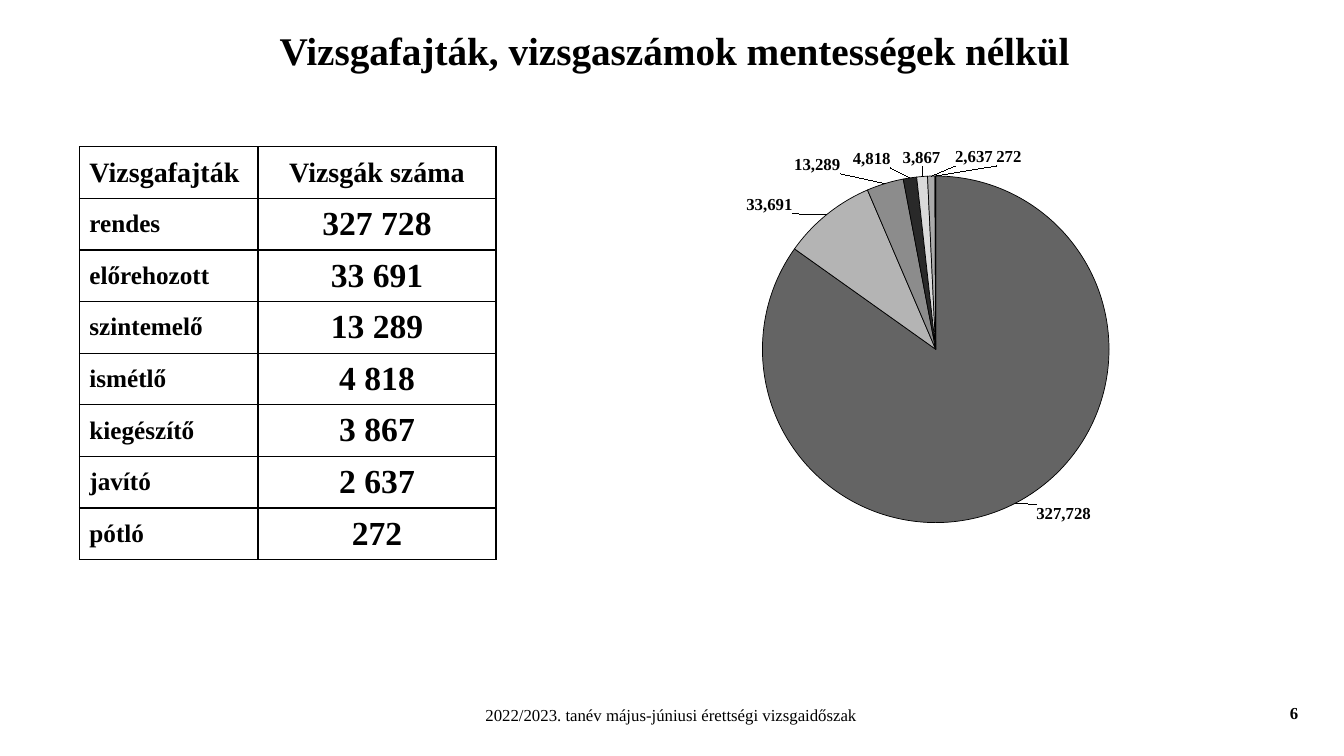
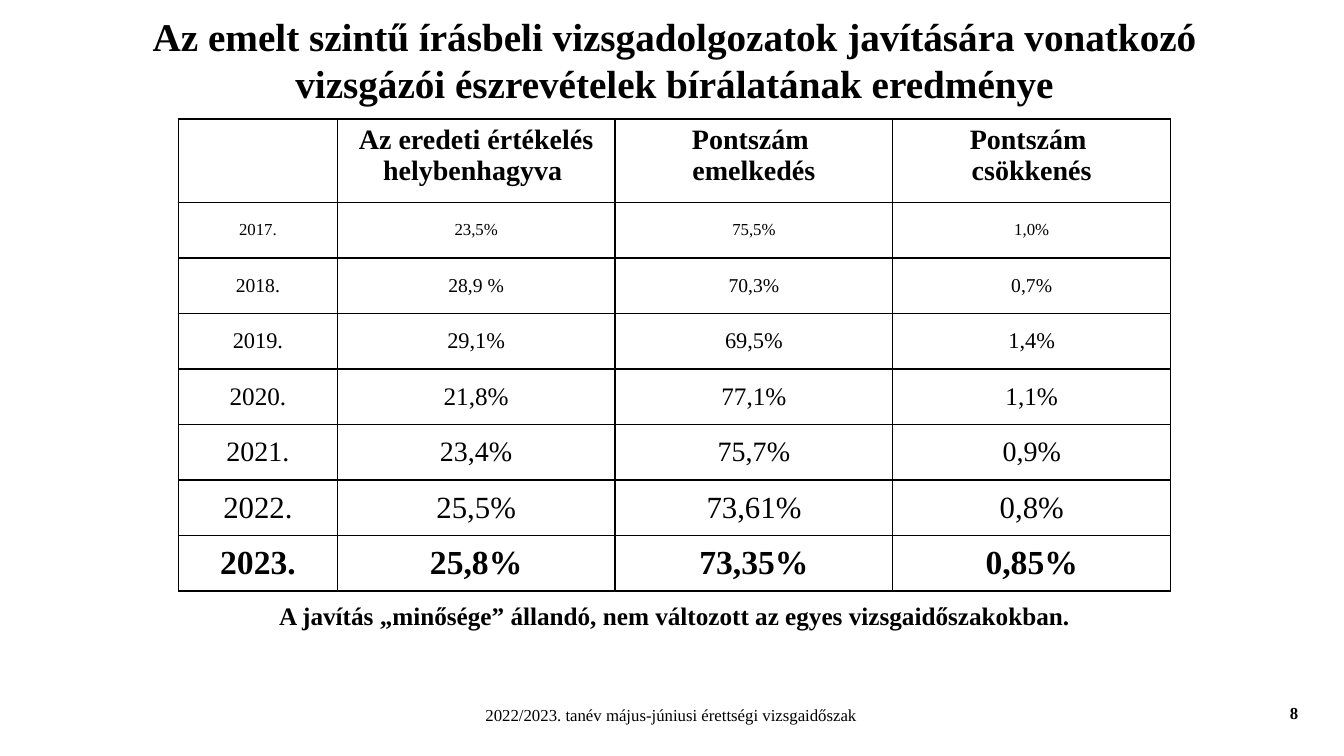
from dataclasses import dataclass
from typing import NamedTuple

from lxml.etree import SubElement
from pptx import Presentation
from pptx.chart.data import CategoryChartData as ChartData
from pptx.dml.color import RGBColor
from pptx.enum.chart import XL_CHART_TYPE as Kind, XL_LABEL_POSITION as Pos
from pptx.enum.text import MSO_ANCHOR as Anchor, PP_ALIGN as Align
from pptx.oxml import parse_xml
from pptx.oxml.ns import nsdecls, qn
from pptx.util import Cm, Pt

# Shared look
BLACK = RGBColor(0x00, 0x00, 0x00)
SHADES = [RGBColor(v, v, v) for v in (0x64, 0xB4, 0x8C, 0x29, 0xDA, 0xAB, 0x7F)]
FONT = "Times New Roman"
FOOTER = "2022/2023. tanév május-júniusi érettségi vizsgaidőszak"
EDGE, SPAN = 2, 30  # left edge and width of the main text, in cm


class Box(NamedTuple):
    left: float
    top: float
    width: float
    height: float


class Row(NamedTuple):
    texts: tuple[str, ...]
    size: float
    bold: bool = True
    lead: float | None = None  # size of the first column, if it differs


@dataclass
class Grid:
    left: float
    top: float
    widths: list[float]
    heights: list[float]
    rows: list[Row]
    first: Align = Align.CENTER
    head: Anchor = Anchor.MIDDLE


class Slice(NamedTuple):
    value: int
    dx: float  # label shift, as a share of the chart
    dy: float


# Content
EXAMS = Grid(2, 3.7, [4.5, 6], [1.3] * 8, [
    Row(("Vizsgafajták", "Vizsgák száma"), 20),
    *(Row(pair, 24, lead=18) for pair in (
        ("rendes", "327 728"),
        ("előrehozott", "33 691"),
        ("szintemelő", "13 289"),
        ("ismétlő", "4 818"),
        ("kiegészítő", "3 867"),
        ("javító", "2 637"),
        ("pótló", "272"),
    )),
], first=Align.LEFT)

YEARS = [
    ("2017.", "23,5%", "75,5%", "1,0%"),
    ("2018.", "28,9 %", "70,3%", "0,7%"),
    ("2019.", "29,1%", "69,5%", "1,4%"),
    ("2020.", "21,8%", "77,1%", "1,1%"),
    ("2021.", "23,4%", "75,7%", "0,9%"),
    ("2022.", "25,5%", "73,61%", "0,8%"),
    ("2023.", "25,8%", "73,35%", "0,85%"),
]
REVIEWS = Grid(4.5, 3, [4, 7, 7, 7], [2.1] + [1.4] * 7, [
    Row(("", "Az eredeti értékelés helybenhagyva ",
         "Pontszám \vemelkedés", "Pontszám \vcsökkenés"), 20),
    # Text grows towards the latest year
    *(Row(texts, 12 + 2 * i, bold=texts is YEARS[-1])
      for i, texts in enumerate(YEARS)),
], head=Anchor.TOP)

SLICES = [
    Slice(327728, 0.03, -0.01),
    Slice(33691, -0.05, 0.01),
    Slice(13289, -0.07, -0.01),
    Slice(4818, -0.03, -0.01),
    Slice(3867, 0, -0.01),
    Slice(2637, 0.07, -0.01),
    Slice(272, 0.12, -0.01),
]


def style(font, size: float, bold: bool) -> None:
    font.name, font.size, font.bold = FONT, Pt(size), bold
    font.color.rgb = BLACK


def write(frame, text: str, *, size: float = 12, bold: bool = False,
          align: Align = Align.CENTER, space: float | None = None) -> None:
    para = frame.paragraphs[0]
    para.text = text
    para.alignment = align
    if space:
        para.line_spacing = space
    for run in para.runs:
        style(run.font, size, bold)


def add_text(slide, box: Box, text: str, *, anchor: Anchor = Anchor.TOP,
             wrap: bool = True, **form) -> None:
    frame = slide.shapes.add_textbox(*map(Cm, box)).text_frame
    frame.word_wrap = wrap
    frame.vertical_anchor = anchor
    write(frame, text, **form)


def add_page(deck, title: str, number: int, height: float):
    slide = deck.slides.add_slide(deck.slide_layouts[6])
    add_text(slide, Box(32.26, 17.58, 0.74, 0.76), str(number),
             wrap=False, bold=True, align=Align.LEFT)
    add_text(slide, Box(9.12, 17.63, 15.6, 0.76), FOOTER)
    add_text(slide, Box(EDGE, 0.5, SPAN, height), title,
             anchor=Anchor.MIDDLE, size=28, bold=True)
    return slide


def frame_cell(cell) -> None:
    props = cell._tc.get_or_add_tcPr()
    for side in ("lnL", "lnR", "lnT", "lnB"):
        line = SubElement(props, qn(f"a:{side}"), w=str(Pt(1)))
        fill = SubElement(line, qn("a:solidFill"))
        SubElement(fill, qn("a:srgbClr"), val=str(BLACK))
    cell.fill.background()


def add_grid(slide, grid: Grid) -> None:
    box = Box(grid.left, grid.top, sum(grid.widths), sum(grid.heights))
    table = slide.shapes.add_table(
        len(grid.rows), len(grid.widths), *map(Cm, box)).table
    table.first_row = table.horz_banding = False
    for col, width in zip(table.columns, grid.widths):
        col.width = Cm(width)
    for r, (row, height) in enumerate(zip(grid.rows, grid.heights)):
        table.rows[r].height = Cm(height)
        for c, text in enumerate(row.texts):
            cell = table.cell(r, c)
            frame_cell(cell)
            cell.vertical_anchor = Anchor.MIDDLE if r else grid.head
            if text:
                write(cell.text_frame, text, bold=row.bold,
                      size=row.lead if row.lead and c == 0 else row.size,
                      align=Align.CENTER if c else grid.first)


def layout(**parts):
    root = parse_xml(f"<c:layout {nsdecls('c')}><c:manualLayout/></c:layout>")
    for name, val in parts.items():
        SubElement(root[0], qn(f"c:{name}"), val=str(val))
    return root


def add_pie(slide, box: Box, slices: list[Slice]) -> None:
    data = ChartData(number_format="#,##0")
    data.categories = [str(i + 1) for i in range(len(slices))]
    data.add_series("Series 1", [s.value for s in slices])
    chart = slide.shapes.add_chart(Kind.PIE, *map(Cm, box), data).chart
    chart.has_legend = chart.has_title = False
    style(chart.font, 12, True)

    # Place of the pie inside the chart
    area = chart._chartSpace.chart.plotArea
    for old in area.findall(qn("c:layout")):
        area.remove(old)
    area.insert(0, layout(layoutTarget="inner", xMode="edge", yMode="edge",
                          x=0.22, y=0.09, w=0.57, h=0.84))

    # Labels shared by all slices
    plot = chart.plots[0]
    plot.vary_by_categories = True
    series = plot.series[0]
    labels = series.data_labels
    labels.show_value = True
    labels.number_format, labels.number_format_is_linked = "#,##0", False
    labels.position = Pos.OUTSIDE_END
    style(labels.font, 12, True)
    lead = labels._element.find(qn("c:showLeaderLines"))
    if lead is None:
        lead = SubElement(labels._element, qn("c:showLeaderLines"))
    lead.set("val", "1")

    # Shade, outline and label shift of each slice
    for i, (part, shade) in enumerate(zip(slices, SHADES)):
        point = series.points[i]
        point.format.fill.solid()
        point.format.fill.fore_color.rgb = shade
        point.format.line.color.rgb = BLACK
        point.format.line.width = Pt(0.5)
        label = point.data_label
        style(label.font, 12, True)
        label.position = Pos.OUTSIDE_END
        mark = labels._element.findall(qn("c:dLbl"))[i]
        mark.insert(1, layout(x=part.dx, y=part.dy))


def main() -> None:
    deck = Presentation()
    deck.slide_width, deck.slide_height = Cm(33.87), Cm(19.05)

    # Exam types
    page = add_page(deck, "Vizsgafajták, vizsgaszámok mentességek nélkül", 6, 1.5)
    add_grid(page, EXAMS)
    add_pie(page, Box(15.77, 3.5, 15.47, 10.4), SLICES)

    # Review results
    page = add_page(
        deck, "Az emelt szintű írásbeli vizsgadolgozatok javítására vonatkozó "
        "vizsgázói észrevételek bírálatának eredménye", 8, 2)
    add_text(page, Box(EDGE, 15.1, SPAN, 1.5),
             "A javítás „minősége” állandó, nem változott az egyes "
             "vizsgaidőszakokban.", size=18, bold=True, space=0.9)
    add_grid(page, REVIEWS)

    deck.save("out.pptx")


if __name__ == "__main__":
    main()
